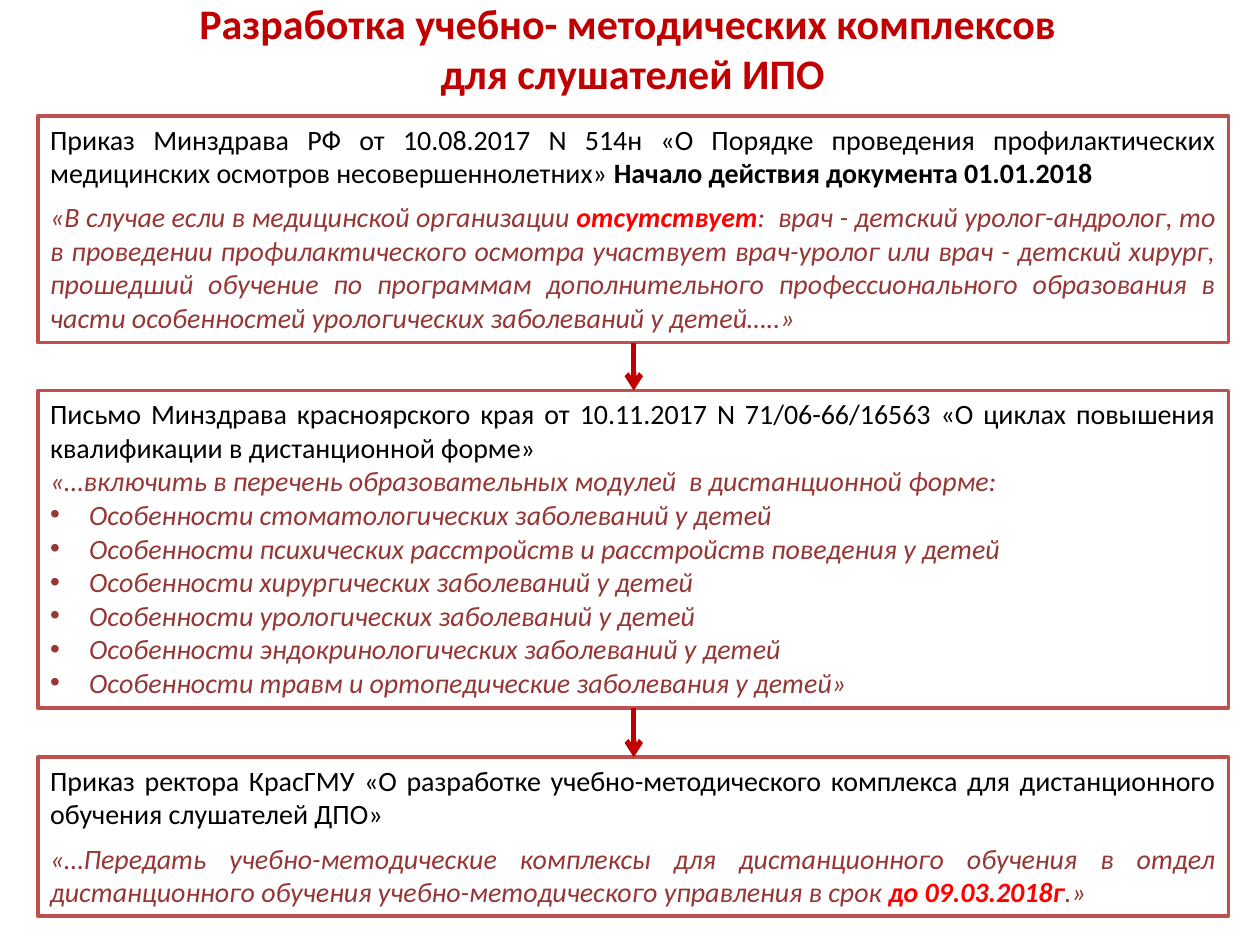
from lxml.etree import SubElement
from pptx import Presentation
from pptx.dml.color import RGBColor
from pptx.enum.shapes import MSO_CONNECTOR, MSO_SHAPE
from pptx.enum.text import MSO_ANCHOR, MSO_AUTO_SIZE, PP_ALIGN
from pptx.oxml.ns import qn
from pptx.util import Inches, Pt

WHITE, DARK_RED, BORDER = "FFFFFF", "C00000", "C0504D"
STYLES = {
    "plain": ("000000", False, False),
    "strong": ("000000", True, False),
    "quote": ("953735", False, True),
    "alert": ("FF0000", True, True),
    "heading": (DARK_RED, True, False),
}

HEADING = ["Разработка учебно- методических комплексов ", "для слушателей ИПО"]

MODULES = [
    "Особенности стоматологических заболеваний у детей",
    "Особенности психических расстройств и расстройств поведения у детей",
    "Особенности хирургических заболеваний у детей",
    "Особенности урологических заболеваний у детей",
    "Особенности эндокринологических заболеваний у детей",
    "Особенности травм и ортопедические заболевания у детей»",
]

DOCUMENTS = [
    {"top": 0.92, "height": 1.8, "gap": 6, "modules": [], "paragraphs": [
        [("Приказ Минздрава РФ от 10.08.2017 N 514н «О Порядке проведения "
          "профилактических медицинских осмотров несовершеннолетних» ", "plain"),
         ("Начало действия документа 01.01.2018", "strong")],
        [("«В случае если в медицинской организации ", "quote"),
         ("отсутствует", "alert"),
         (":  врач - детский уролог-андролог, то в проведении профилактического "
          "осмотра участвует врач-уролог или врач - детский хирург, прошедший "
          "обучение по программам дополнительного профессионального образования "
          "в части особенностей урологических заболеваний у детей…..»", "quote")],
    ]},
    {"top": 3.1, "height": 2.52, "gap": 0, "modules": MODULES, "paragraphs": [
        [("Письмо Минздрава красноярского края от 10.11.2017 N 71/06-66/16563 "
          "«О циклах повышения квалификации в дистанционной форме» ", "plain")],
        [("«…включить в перечень образовательных модулей  в дистанционной форме:",
          "quote")],
    ]},
    {"top": 6.01, "height": 1.26, "gap": 6, "modules": [], "paragraphs": [
        [("Приказ ректора КрасГМУ «О разработке учебно-методического комплекса "
          "для дистанционного обучения слушателей ДПО» ", "plain")],
        [("«…Передать учебно-методические комплексы для дистанционного обучения "
          "в отдел дистанционного обучения учебно-методического управления "
          "в срок ", "quote"),
         ("до 09.03.2018г", "alert"),
         (".»", "quote")],
    ]},
]
LEFT, WIDTH, ARROW_X = 0.3, 9.45, 5.03


def paint(color_format, color):
    color_format.rgb = RGBColor.from_string(color)


def frame(shape, border):
    shape.fill.solid()
    paint(shape.fill.fore_color, WHITE)
    paint(shape.line.color, border)
    shape.line.width = Pt(2)


def add_bullet(paragraph):
    properties = paragraph._p.get_or_add_pPr()
    properties.set("marL", str(Inches(0.31)))
    properties.set("indent", str(-Inches(0.31)))
    SubElement(properties, qn("a:buFont"), typeface="Arial")
    SubElement(properties, qn("a:buChar"), char="•")


def write(text_frame, paragraphs, size, align, gap=0, first_bullet=None):
    for index, runs in enumerate(paragraphs):
        paragraph = text_frame.paragraphs[0] if index == 0 else text_frame.add_paragraph()
        paragraph.alignment = align
        paragraph.space_after = Pt(gap if index < len(paragraphs) - 1 else 0)
        if first_bullet is not None and index >= first_bullet:
            add_bullet(paragraph)
        for text, style in runs:
            run = paragraph.add_run()
            run.text = text
            color, run.font.bold, run.font.italic = STYLES[style]
            run.font.name, run.font.size = "Calibri", Pt(size)
            paint(run.font.color, color)


def add_document(slide, document):
    box = slide.shapes.add_shape(
        MSO_SHAPE.RECTANGLE, Inches(LEFT), Inches(document["top"]),
        Inches(WIDTH), Inches(document["height"]))
    box.shadow.inherit = False
    frame(box, BORDER)
    text_frame = box.text_frame
    text_frame.word_wrap = True
    text_frame.vertical_anchor = MSO_ANCHOR.TOP
    text_frame.auto_size = MSO_AUTO_SIZE.SHAPE_TO_FIT_TEXT
    modules = [[(module, "quote")] for module in document["modules"]]
    write(text_frame, document["paragraphs"] + modules, 16, PP_ALIGN.JUSTIFY,
          document["gap"], len(document["paragraphs"]))


def add_arrow(slide, start, end):
    arrow = slide.shapes.add_connector(
        MSO_CONNECTOR.STRAIGHT, Inches(ARROW_X), Inches(start),
        Inches(ARROW_X), Inches(end))
    paint(arrow.line.color, DARK_RED)
    arrow.line.width = Pt(3)
    SubElement(arrow.line._get_or_add_ln(), qn("a:tailEnd"), type="arrow")
    SubElement(arrow._element.spPr, qn("a:effectLst"))


def main():
    presentation = Presentation()
    presentation.slide_width, presentation.slide_height = Inches(10), Inches(7.5)
    slide = presentation.slides.add_slide(presentation.slide_layouts[5])

    title = slide.shapes.title
    title.left, title.top = Inches(0.1), Inches(0.01)
    title.width, title.height = Inches(9.84), Inches(0.74)
    frame(title, WHITE)
    title.text_frame.auto_size = MSO_AUTO_SIZE.NONE
    title.text_frame.vertical_anchor = MSO_ANCHOR.MIDDLE
    write(title.text_frame, [[(line, "heading")] for line in HEADING], 24, PP_ALIGN.CENTER)

    for document in DOCUMENTS:
        add_document(slide, document)
    for upper, lower in zip(DOCUMENTS, DOCUMENTS[1:]):
        add_arrow(slide, upper["top"] + upper["height"], lower["top"])

    presentation.save("out.pptx")


if __name__ == "__main__":
    main()
